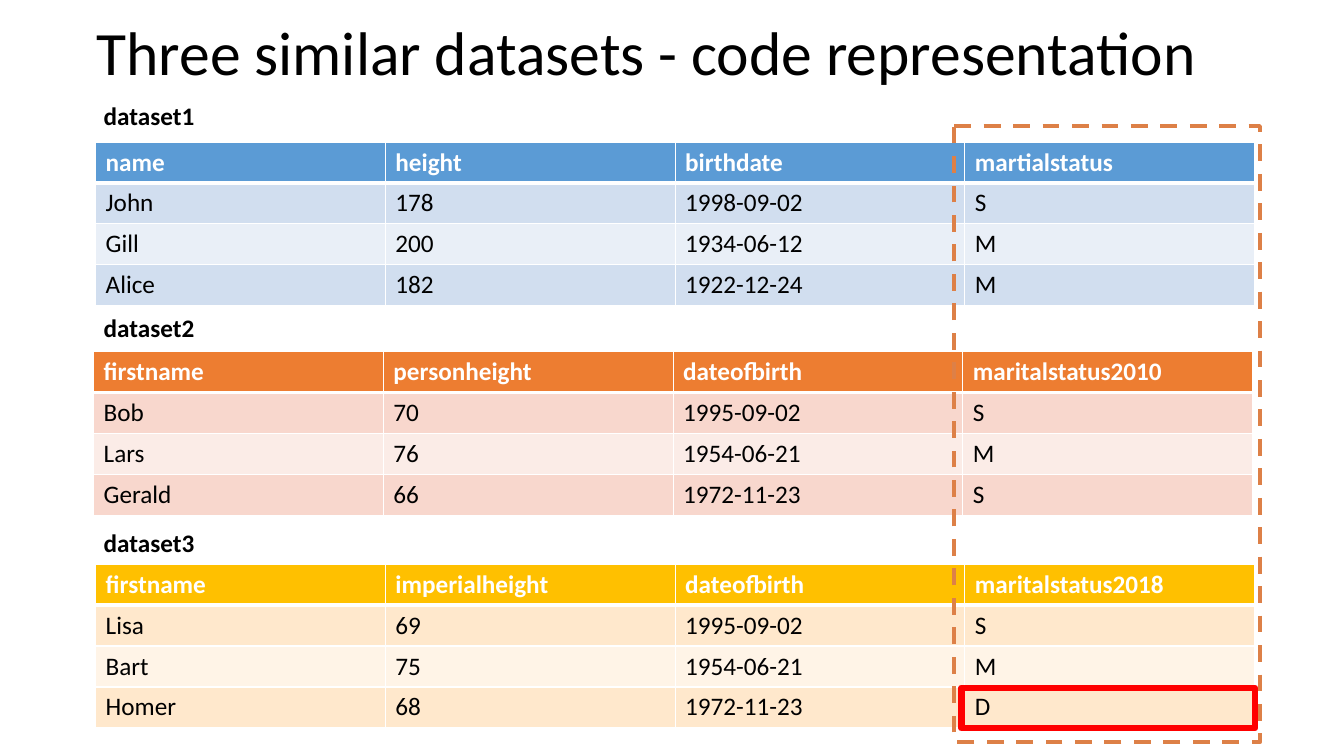
import pptx
import pptx.dml.color
import pptx.enum.dml
import pptx.enum.shapes
import pptx.enum.text
import pptx.oxml
import pptx.oxml.ns
import pptx.util

Cm = pptx.util.Cm
Pt = pptx.util.Pt

COLORS = {
    "text": "000000", "white": "FFFFFF", "red": "FF0000", "frame": "DD8047",
    "blue": "5B9BD5", "blue_dark": "D1DEEF", "blue_light": "E9EFF7",
    "orange": "ED7D31", "orange_dark": "F8D7CD", "orange_light": "FBECE7",
    "gold": "FFC000", "gold_dark": "FFE8CC", "gold_light": "FFF4E7",
}
ROW_H = 1.03
TABLE_W = 29.21
LABEL_LEFT = 2.36

DATASETS = [
    ("dataset1", 2.44, 2.41, 3.58, "blue", [
        ("name", "height", "birthdate", "martialstatus"),
        ("John", "178", "1998-09-02", "S"),
        ("Gill", "200", "1934-06-12", "M"),
        ("Alice", "182", "1922-12-24", "M")]),
    ("dataset2", 7.77, 2.36, 8.86, "orange", [
        ("firstname", "personheight", "dateofbirth", "maritalstatus2010"),
        ("Bob", "70", "1995-09-02", "S"),
        ("Lars", "76", "1954-06-21", "M"),
        ("Gerald", "66", "1972-11-23", "S")]),
    ("dataset3", 13.18, 2.41, 14.22, "gold", [
        ("firstname", "imperialheight", "dateofbirth", "maritalstatus2018"),
        ("Lisa", "69", "1995-09-02", "S"),
        ("Bart", "75", "1954-06-21", "M"),
        ("Homer", "68", "1972-11-23", "D")]),
]


def rgb(name):
    """Return the named colour."""
    return pptx.dml.color.RGBColor.from_string(COLORS[name])


def add_run(p, text, size, color, bold=False):
    """Add one formatted run to a paragraph."""
    r = p.add_run()
    r.text = text
    r.font.name = "Calibri"
    r.font.size = Pt(size)
    r.font.bold = bold
    r.font.color.rgb = rgb(color)


def set_borders(cell, top, bottom):
    """Draw white borders round a cell, with widths in points."""
    tc_pr = cell._tc.get_or_add_tcPr()
    for side, width in (("L", 0.96), ("R", 0.96), ("T", top), ("B", bottom)):
        tc_pr.append(pptx.oxml.parse_xml(
            f'<a:ln{side} {pptx.oxml.ns.nsdecls("a")} w="{Pt(width)}"><a:solidFill>'
            f'<a:srgbClr val="{COLORS["white"]}"/></a:solidFill></a:ln{side}>'))


def add_grid(s, left, top, width, rows, theme=None):
    """Add a table; without a theme its cells are unfilled bold labels."""
    n = len(rows[0])
    table = s.shapes.add_table(len(rows), n, Cm(left), Cm(top), Cm(width),
                               Cm(ROW_H * len(rows))).table
    table.first_row = table.horz_banding = False
    for column in table.columns:
        column.width = Cm(width / n)
    for i, values in enumerate(rows):
        table.rows[i].height = Cm(ROW_H)
        for j, text in enumerate(values):
            cell = table.cell(i, j)
            set_borders(cell, 3 if i == 1 else 0.96, 3 if i == 0 else 0.96)
            if theme:
                shade = "" if i == 0 else "_dark" if i % 2 else "_light"
                cell.fill.solid()
                cell.fill.fore_color.rgb = rgb(theme + shade)
            else:
                cell.fill.background()
            color = "white" if theme and i == 0 else "text"
            add_run(cell.text_frame.paragraphs[0], text, 18, color, i == 0)


def add_title(s, left, top, width, height, text):
    """Add the slide title, centred vertically in its box."""
    tf = s.shapes.add_textbox(Cm(left), Cm(top), Cm(width), Cm(height)).text_frame
    tf.word_wrap = True
    tf.vertical_anchor = pptx.enum.text.MSO_ANCHOR.MIDDLE
    p = tf.paragraphs[0]
    p.line_spacing = 0.9
    add_run(p, text, 44, "text")


def add_outline(s, kind, left, top, width, height, color, weight):
    """Add an unfilled outline shape and return it."""
    sp = s.shapes.add_shape(kind, Cm(left), Cm(top), Cm(width), Cm(height))
    sp.shadow.inherit = False
    sp.fill.background()
    sp.line.color.rgb = rgb(color)
    sp.line.width = Pt(weight)
    return sp


def add_highlights(s, left, top, width, height):
    """Frame the marital status column and mark its odd last value."""
    shapes = pptx.enum.shapes.MSO_SHAPE
    add_outline(s, shapes.RECTANGLE, left + 0.18, top + height - 1.37,
                width - 0.3, 1.02, "red", 4.5)
    sp = add_outline(s, shapes.ROUNDED_RECTANGLE, left, top, width, height, "frame", 3)
    sp.adjustments[0] = 0
    sp.line.dash_style = pptx.enum.dml.MSO_LINE.DASH


def main():
    """Build and save the slide."""
    prs = pptx.Presentation()
    prs.slide_width, prs.slide_height = Cm(33.87), Cm(19.05)
    s = prs.slides.add_slide(prs.slide_layouts[6])
    add_title(s, 2.18, -0.43, TABLE_W, 3.68, "Three similar datasets - code representation")
    for label, label_top, left, top, theme, rows in DATASETS:
        add_grid(s, LABEL_LEFT, label_top, TABLE_W / 4, [(label,)])
        add_grid(s, left, top, TABLE_W, rows, theme)
    add_highlights(s, 24.05, 3.18, 7.7, 15.52)
    prs.save("out.pptx")


if __name__ == "__main__":
    main()
